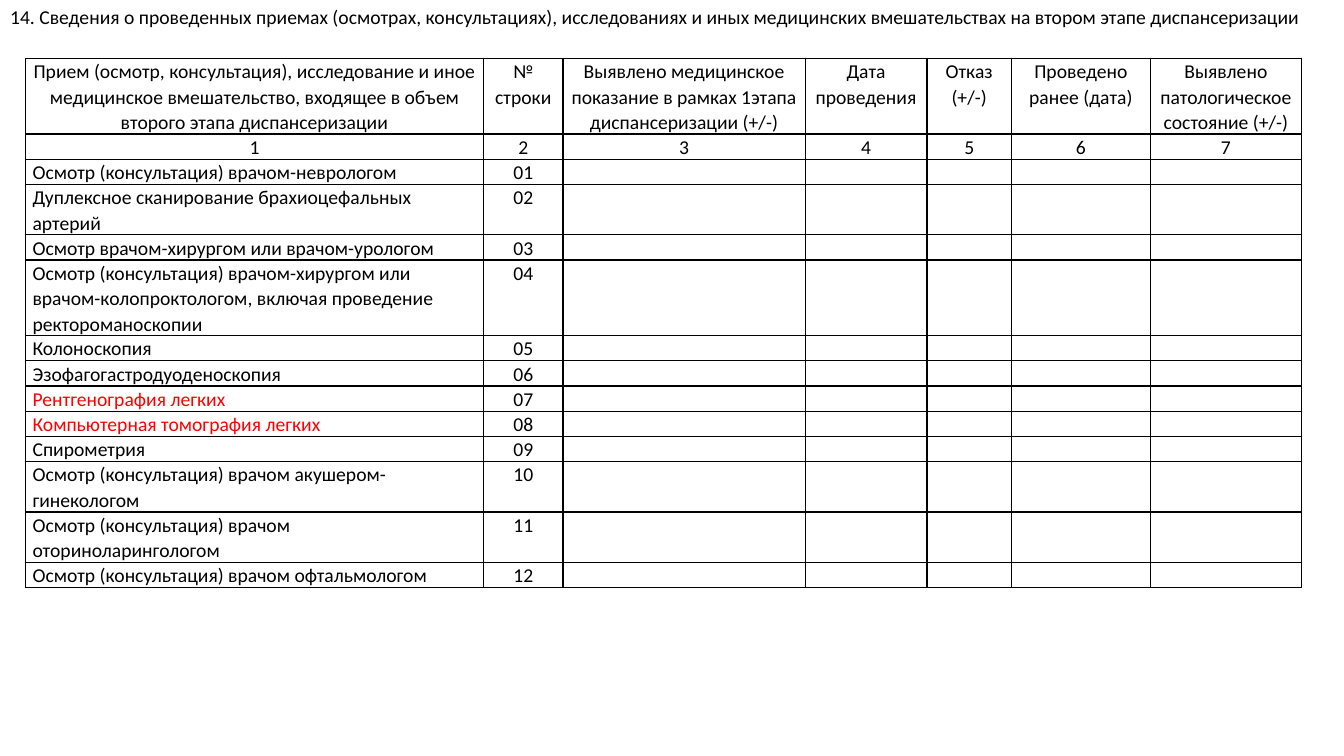
"""Build the slide listing second-stage screening examinations."""
from lxml import etree
from pptx import Presentation
from pptx.dml.color import RGBColor
from pptx.enum.text import MSO_ANCHOR, MSO_AUTO_SIZE, PP_ALIGN
from pptx.oxml.ns import qn
from pptx.util import Cm, Pt

LEFT, CENTER = PP_ALIGN.LEFT, PP_ALIGN.CENTER
TOP, MIDDLE = MSO_ANCHOR.TOP, MSO_ANCHOR.MIDDLE
GROW = MSO_AUTO_SIZE.SHAPE_TO_FIT_TEXT

COLORS = {"text": "000000", "accent": "FF0000", "border": "000000"}
FONT = "Calibri"
FONT_SIZE = 14
LINE_HEIGHT = 0.635

TITLE = (
    "14. Сведения о проведенных приемах (осмотрах, консультациях), исследованиях "
    "и иных медицинских вмешательствах на втором этапе диспансеризации"
)
COLUMNS = [
    ("Прием (осмотр, консультация), исследование и иное медицинское вмешательство, "
     "входящее в объем второго этапа диспансеризации", 11.55),
    ("№ строки", 2),
    ("Выявлено медицинское показание в рамках 1этапа диспансеризации (+/-)", 6.1),
    ("Дата проведения", 3.07),
    ("Отказ (+/-)", 2.13),
    ("Проведено ранее (дата)", 3.5),
    ("Выявлено патологическое состояние (+/-)", 3.81),
]
HEADER_LINES = 3
EXAMS = [
    ("Осмотр (консультация) врачом-неврологом", 1, "text"),
    ("Дуплексное сканирование брахиоцефальных артерий", 2, "text"),
    ("Осмотр врачом-хирургом или врачом-урологом", 1, "text"),
    ("Осмотр (консультация) врачом-хирургом или врачом-колопроктологом, "
     "включая проведение ректороманоскопии", 3, "text"),
    ("Колоноскопия", 1, "text"),
    ("Эзофагогастродуоденоскопия", 1, "text"),
    ("Рентгенография легких", 1, "accent"),
    ("Компьютерная томография легких", 1, "accent"),
    ("Спирометрия", 1, "text"),
    ("Осмотр (консультация) врачом акушером-гинекологом", 2, "text"),
    ("Осмотр (консультация) врачом оториноларингологом", 2, "text"),
    ("Осмотр (консультация) врачом офтальмологом", 1, "text"),
]
FIRST_MIDDLE_EXAM = 6


def write(frame, text, color="text", align=LEFT, spacing=1.0, after=0):
    """Fill a text frame with one formatted paragraph."""
    para = frame.paragraphs[0]
    para.alignment = align
    para.line_spacing = spacing
    para.space_after = Pt(after)
    if not text:
        etree.SubElement(para._p, qn("a:endParaRPr"), sz=str(FONT_SIZE * 100))
        return
    span = para.add_run()
    span.text = text
    span.font.name = FONT
    span.font.size = Pt(FONT_SIZE)
    span.font.color.rgb = RGBColor.from_string(COLORS[color])


def add_borders(cell):
    """Draw a thin line on each side of a cell."""
    properties = cell._tc.get_or_add_tcPr()
    for index, side in enumerate(("lnL", "lnR", "lnT", "lnB")):
        line = etree.Element(qn(f"a:{side}"), w=str(Pt(1)))
        fill = etree.SubElement(line, qn("a:solidFill"))
        etree.SubElement(fill, qn("a:srgbClr"), val=COLORS["border"])
        properties.insert(index, line)


def fill_cell(cell, text, anchor=TOP, **style):
    """Format one table cell and write its text."""
    cell.margin_left = cell.margin_right = Cm(0.18)
    cell.margin_top = cell.margin_bottom = 0
    cell.vertical_anchor = anchor
    cell.fill.background()
    add_borders(cell)
    write(cell.text_frame, text, spacing=1.07, **style)


def add_title(page, width):
    """Place the heading across the top of the page."""
    title = page.shapes.title
    title.left, title.top, title.width, title.height = 0, 0, width, Cm(0.86)
    frame = title.text_frame
    frame.word_wrap = True
    frame.auto_size = GROW
    frame.vertical_anchor = TOP
    write(frame, TITLE)


def add_exam_table(page):
    """Place the table of examinations."""
    lines = [HEADER_LINES, 1] + [count for _, count, _ in EXAMS]
    width = sum(size for _, size in COLUMNS)
    table = page.shapes.add_table(
        len(lines), len(COLUMNS), Cm(0.64), Cm(1.47),
        Cm(width), Cm(LINE_HEIGHT * sum(lines)),
    ).table
    table.first_row = table.horz_banding = False
    for row, count in zip(table.rows, lines):
        row.height = Cm(LINE_HEIGHT * count)
    for index, (heading, size) in enumerate(COLUMNS):
        table.columns[index].width = Cm(size)
        fill_cell(table.cell(0, index), heading, align=CENTER, after=5)
        fill_cell(table.cell(1, index), str(index + 1), align=CENTER)
    for index, (exam, _, color) in enumerate(EXAMS):
        row = index + 2
        anchor = MIDDLE if index >= FIRST_MIDDLE_EXAM else TOP
        fill_cell(table.cell(row, 0), exam, anchor=anchor, color=color)
        fill_cell(table.cell(row, 1), f"{index + 1:02d}", align=CENTER)
        for column in range(2, len(COLUMNS)):
            fill_cell(table.cell(row, column), "")


def main():
    """Create and save the deck."""
    deck = Presentation()
    deck.slide_width, deck.slide_height = Cm(33.87), Cm(19.05)
    page = deck.slides.add_slide(deck.slide_layouts[5])
    add_title(page, deck.slide_width)
    add_exam_table(page)
    deck.save("out.pptx")


if __name__ == "__main__":
    main()
